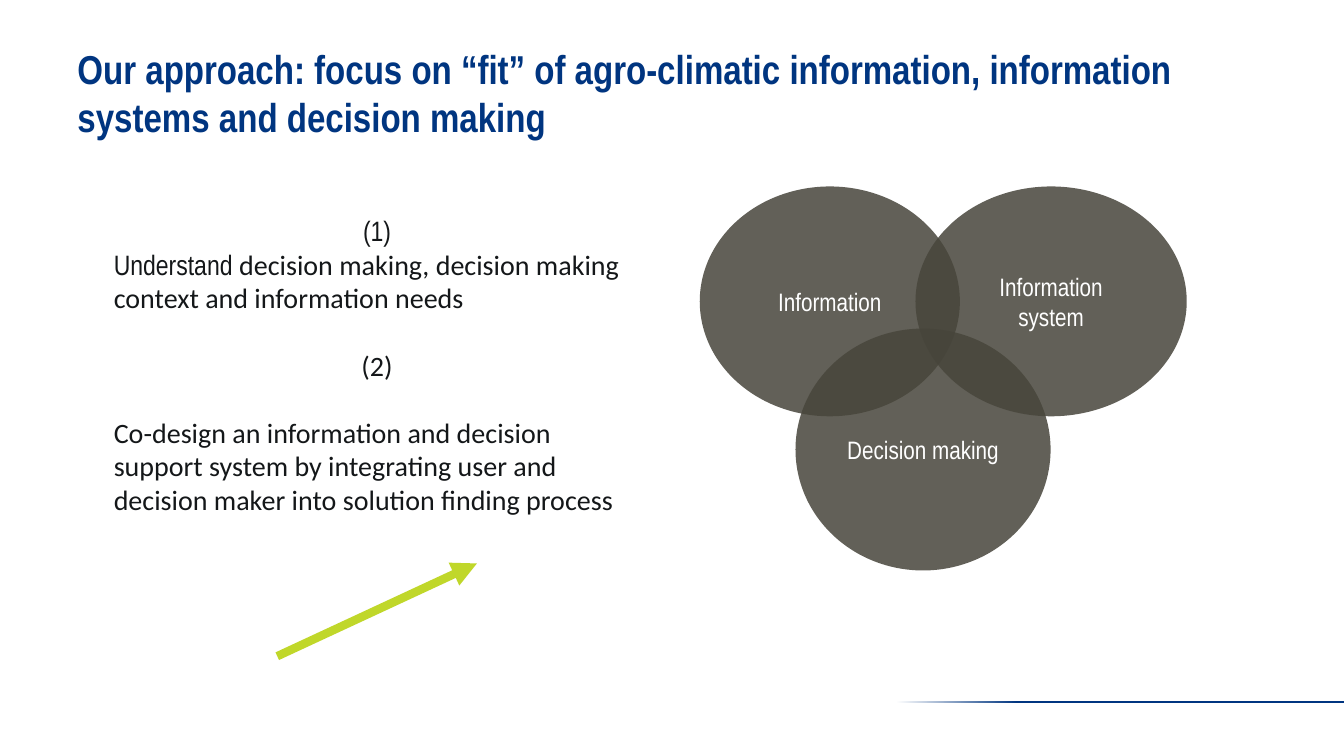
from lxml.etree import SubElement
from pptx import Presentation
from pptx.dml.color import RGBColor
from pptx.enum.shapes import MSO_CONNECTOR, MSO_SHAPE
from pptx.enum.text import MSO_ANCHOR, PP_ALIGN
from pptx.oxml.ns import qn
from pptx.util import Inches, Pt

NAVY = RGBColor(0x00, 0x35, 0x80)
LIME = RGBColor(0xC0, 0xD7, 0x2A)
STONE = RGBColor(0x47, 0x45, 0x3B)
INK = RGBColor(0x14, 0x17, 0x19)
WHITE = RGBColor(0xFF, 0xFF, 0xFF)
NARROW, BODY = "Arial Narrow", "Calibri"


class Deck:
    """Holds the text styles and the current slide."""

    styles = {
        "title": {"name": NARROW, "size": Pt(28.8), "bold": True, "color": NAVY},
        "label": {"name": NARROW, "size": Pt(18), "color": WHITE},
        "lead": {"name": NARROW, "size": Pt(20), "color": INK},
        "body": {"name": BODY, "size": Pt(20), "color": INK},
    }

    def __init__(self, prs):
        self.slide = prs.slides.add_slide(prs.slide_layouts[6])
        self.shapes = self.slide.shapes

    def typeset(self, frame, paras):
        frame.word_wrap = True
        for i, (runs, form) in enumerate(paras):
            para = frame.paragraphs[0] if i == 0 else frame.add_paragraph()
            for key, val in form.items():
                setattr(para, key, val)
            for text, style in runs:
                run = para.add_run()
                run.text = text
                for key, val in self.styles[style].items():
                    if key == "color":
                        run.font.color.rgb = val
                    else:
                        setattr(run.font, key, val)

    def text(self, box, paras):
        frame = self.shapes.add_textbox(*map(Inches, box)).text_frame
        self.typeset(frame, paras)

    def shape(self, kind, box):
        shape = self.shapes.add_shape(kind, *map(Inches, box))
        shape.shadow.inherit = False
        shape.line.fill.background()
        return shape

    def circle(self, box, label):
        oval = self.shape(MSO_SHAPE.OVAL, box)
        oval.fill.solid()
        oval.fill.fore_color.rgb = STONE
        color = oval.element.spPr.find(".//" + qn("a:srgbClr"))
        SubElement(color, qn("a:alpha"), val="85000")
        oval.text_frame.vertical_anchor = MSO_ANCHOR.MIDDLE
        self.typeset(oval.text_frame,
                     [([(label, "label")], {"alignment": PP_ALIGN.CENTER})])

    def fade(self, box, stops):
        fill = self.shape(MSO_SHAPE.RECTANGLE, box).fill
        fill.gradient()
        fill.gradient_angle = 0
        for stop, (place, color) in zip(fill.gradient_stops, stops):
            stop.position = place
            stop.color.rgb = color

    def arrow(self, start, end, color, width):
        line = self.shapes.add_connector(
            MSO_CONNECTOR.STRAIGHT, *map(Inches, start + end))
        line.line.color.rgb = color
        line.line.width = Pt(width)
        props = line.element.spPr
        SubElement(props.find(qn("a:ln")), qn("a:tailEnd"), type="triangle")
        SubElement(props, qn("a:effectLst"))


def main():
    prs = Presentation()
    prs.slide_width, prs.slide_height = Inches(13.33), Inches(7.5)
    deck = Deck(prs)
    deck.fade((8.89, 6.95, 4.44, 0.02), [(0, WHITE), (0.27, NAVY)])
    title = ("Our approach: focus on “fit” of agro-climatic information, "
             "information systems and decision making")
    deck.text((0.67, 0.4, 11.96, 0.97),
              [([(title, "title")], {"line_spacing": Pt(34)})])
    deck.arrow((2.75, 6.51), (4.73, 5.59), LIME, 6)
    for box, label in [
        ((6.94, 1.85, 2.58, 2.28), "Information"),
        ((7.89, 3.26, 2.53, 2.4), "Decision making"),
        ((9.08, 1.85, 2.69, 2.28), "Information system"),
    ]:
        deck.circle(box, label)
    mid, gap = {"alignment": PP_ALIGN.CENTER}, {"space_before": Pt(24)}
    deck.text((1.03, 2.07, 5.42, 3.47), [
        ([("(1)", "lead")], mid),
        ([("Understand ", "lead"),
          ("decision making, decision making context and information needs",
           "body")], {}),
        ([("(2)", "body")], mid | gap),
        ([("Co-design an information and decision support system by "
           "integrating user and decision maker into solution finding process",
           "body")], gap),
    ])
    prs.save("out.pptx")


if __name__ == "__main__":
    main()
